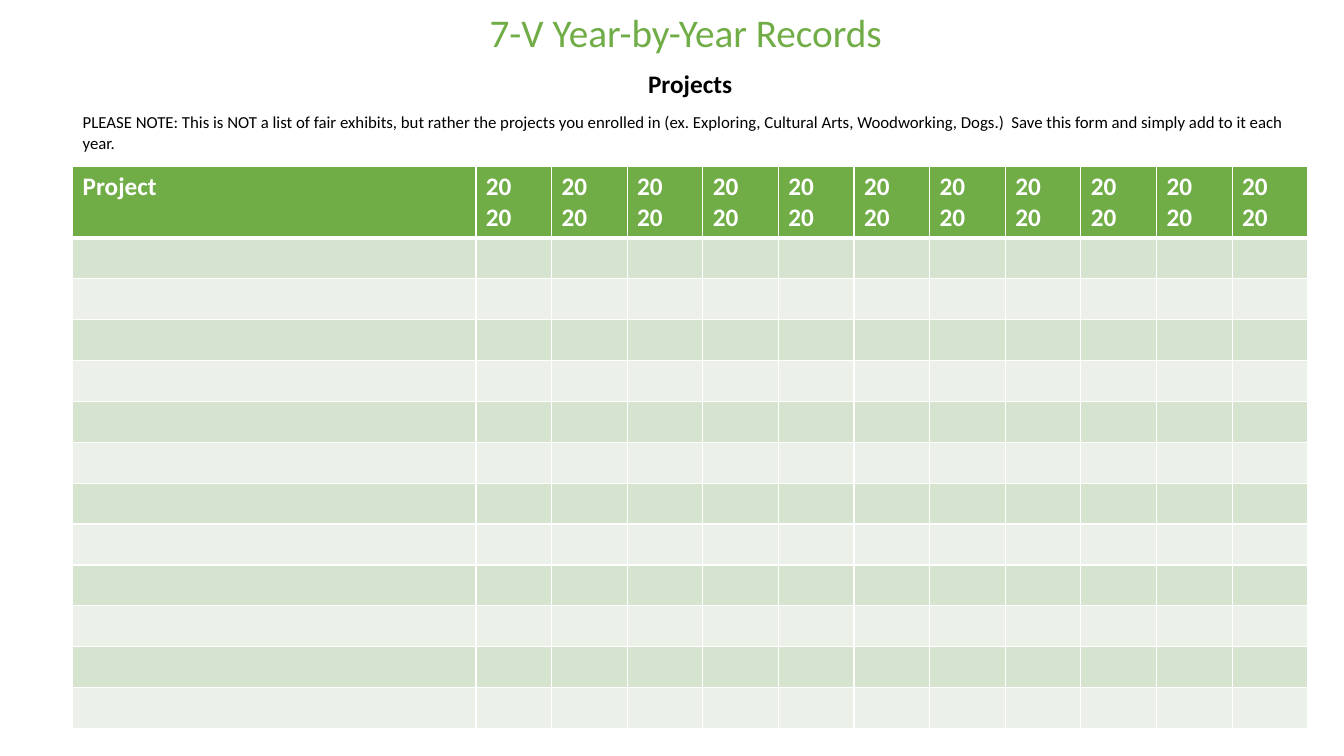
import pptx
import pptx.util
import pptx.dml.color
import pptx.enum.text
import lxml.etree
import pptx.oxml.ns

Inches = pptx.util.Inches
Pt = pptx.util.Pt
ALIGN = pptx.enum.text.PP_ALIGN
hex_color = pptx.dml.color.RGBColor.from_string
GREEN = "70AD47"
WHITE = "FFFFFF"
BLACK = "000000"
BANDS = ["D5E3CF", "EBF1E9"]
YEAR_COLUMNS = 11
PROJECT_ROWS = 12


def add_span(para, text, size, color, bold):
    span = para.add_run()
    span.text = text
    span.font.name = "Calibri"
    span.font.size = Pt(size)
    span.font.bold = bold
    span.font.color.rgb = hex_color(color)


def add_border(cell, side, width):
    qn = pptx.oxml.ns.qn
    properties = cell._tc.get_or_add_tcPr()
    line = lxml.etree.SubElement(properties, qn("a:ln" + side), w=str(Pt(width)))
    fill = lxml.etree.SubElement(line, qn("a:solidFill"))
    lxml.etree.SubElement(fill, qn("a:srgbClr"), val=WHITE)


deck = pptx.Presentation()
deck.slide_width = Inches(13.33)
deck.slide_height = Inches(7.5)
page = deck.slides.add_slide(deck.slide_layouts[5])

heading = page.shapes.title
heading.left, heading.top = Inches(0.72), Inches(0)
heading.width, heading.height = Inches(12.25), Inches(2.11)
frame = heading.text_frame
frame.word_wrap = True
frame.auto_size = pptx.enum.text.MSO_AUTO_SIZE.NONE
frame.vertical_anchor = pptx.enum.text.MSO_ANCHOR.TOP

heading_lines = [
    ("7-V Year-by-Year Records ", 28, GREEN, False, ALIGN.CENTER),
    ("Projects", 18, BLACK, True, ALIGN.CENTER),
    ("PLEASE NOTE: This is NOT a list of fair exhibits, but rather the projects "
     "you enrolled in (ex. Exploring, Cultural Arts, Woodworking, Dogs.)  "
     "Save this form and simply add to it each year.",
     12, BLACK, False, ALIGN.LEFT),
]
for index, (text, size, color, bold, align) in enumerate(heading_lines):
    para = frame.add_paragraph() if index else frame.paragraphs[0]
    para.alignment = align
    para.line_spacing = 1.07
    para.space_before = Pt(0)
    para.space_after = Pt(8)
    add_span(para, text, size, color, bold)

table = page.shapes.add_table(
    PROJECT_ROWS + 1, YEAR_COLUMNS + 1,
    Inches(0.72), Inches(1.65), Inches(12.25), Inches(5.51),
).table
for index, column in enumerate(table.columns):
    column.width = Inches(0.75 if index else 4)
for index, row in enumerate(table.rows):
    row.height = Inches(0.4 if index else 0.71)
    color = BANDS[(index - 1) % 2] if index else GREEN
    for cell in row.cells:
        add_border(cell, "L", 1)
        add_border(cell, "R", 1)
        add_border(cell, "T", 3 if index == 1 else 1)
        add_border(cell, "B", 1 if index else 3)
        cell.fill.solid()
        cell.fill.fore_color.rgb = hex_color(color)

for position, cell in enumerate(table.rows[0].cells):
    labels = ["20", "20"] if position else ["Project"]
    for index, label in enumerate(labels):
        para = cell.text_frame.add_paragraph() if index else cell.text_frame.paragraphs[0]
        add_span(para, label, 18, WHITE, True)

deck.save("out.pptx")
